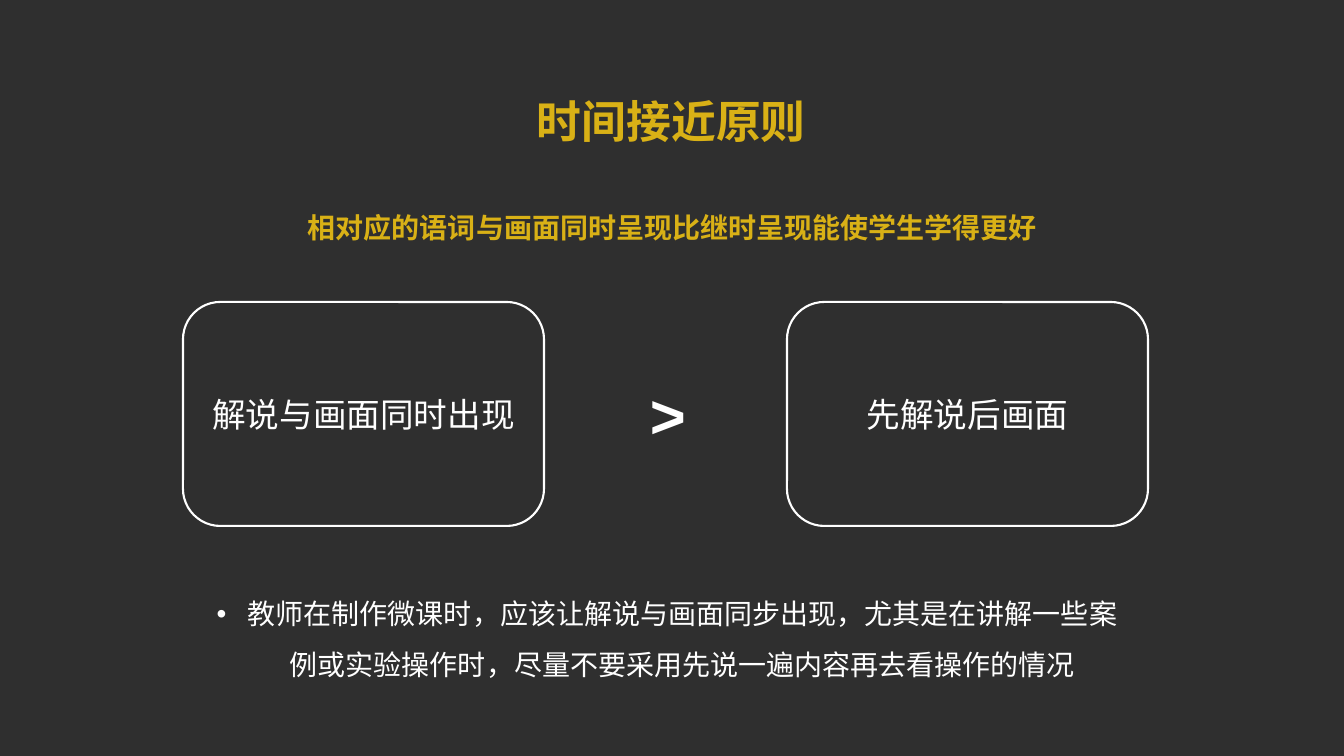
from lxml import etree
from pptx import Presentation
from pptx import util as u
from pptx.dml.color import RGBColor
from pptx.enum import shapes, text
from pptx.oxml.ns import qn

PX = 914400 / 100.8
CJK = "Noto Sans CJK SC"
DARK, GOLD, WHITE = "2F2F2F", "D9B116", "FFFFFF"


def px(*lengths):
    """Turn whole pixels into EMU."""
    return [u.Emu(round(n * PX)) for n in lengths]


def write(sp, words, size, color, bold=False, font=CJK, spacing=1.0,
          anchor=text.MSO_ANCHOR.TOP, wrap=True, bullet=None):
    tf = sp.text_frame
    for name, value in {"word_wrap": wrap, "vertical_anchor": anchor}.items():
        setattr(tf, name, value)
    p = tf.paragraphs[0]
    p.alignment, p.line_spacing = text.PP_ALIGN.CENTER, spacing
    if bullet:
        pPr = p._p.get_or_add_pPr()
        indent = px(31)[0]
        pPr.set("marL", str(indent))
        pPr.set("indent", str(-indent))
        etree.SubElement(pPr, qn("a:buFont")).set("typeface", "Arial")
        etree.SubElement(pPr, qn("a:buChar")).set("char", bullet)
    r = p.add_run()
    r.text = words
    for name, value in {"size": u.Pt(size), "bold": bold, "name": font}.items():
        setattr(r.font, name, value)
    r.font.color.rgb = RGBColor.from_string(color)
    etree.SubElement(r._r.get_or_add_rPr(), qn("a:ea")).set("typeface", font)


prs = Presentation()
prs.slide_width, prs.slide_height = px(1344, 756)
slide = prs.slides.add_slide(prs.slide_layouts[6])
slide.background.fill.solid()
slide.background.fill.fore_color.rgb = RGBColor.from_string(DARK)

# Principle and its statement
title = slide.shapes.add_textbox(*px(62, 75, 1219, 78))
write(title, "时间接近原则", 32, GOLD, bold=True, spacing=0.9,
      anchor=text.MSO_ANCHOR.BOTTOM)
statement = slide.shapes.add_textbox(*px(93, 202, 1159, 60))
write(statement, "相对应的语词与画面同时呈现比继时呈现能使学生学得更好",
      20, GOLD, bold=True, spacing=1.1)

# The two ways compared
for left, words in ((183, "解说与画面同时出现"), (787, "先解说后画面")):
    sp = slide.shapes.add_shape(shapes.MSO_SHAPE.ROUNDED_RECTANGLE,
                                *px(left, 302, 361, 224))
    sp.shadow.inherit = False
    sp.fill.solid()
    sp.fill.fore_color.rgb = RGBColor.from_string(DARK)
    sp.line.color.rgb = RGBColor.from_string(WHITE)
    sp.line.width = u.Pt(1.5)
    write(sp, words, 24, WHITE, anchor=text.MSO_ANCHOR.MIDDLE)

greater = slide.shapes.add_textbox(*px(640, 372, 56, 85))
write(greater, ">", 44, WHITE, bold=True, font="Arial", wrap=False)

# Advice for teachers
advice = slide.shapes.add_textbox(*px(196, 575, 942, 112))
write(advice, "教师在制作微课时，应该让解说与画面同步出现，尤其是在讲解一些案例或实验操作时，"
      "尽量不要采用先说一遍内容再去看操作的情况", 20, WHITE, spacing=1.5, bullet="•")

prs.save("out.pptx")
